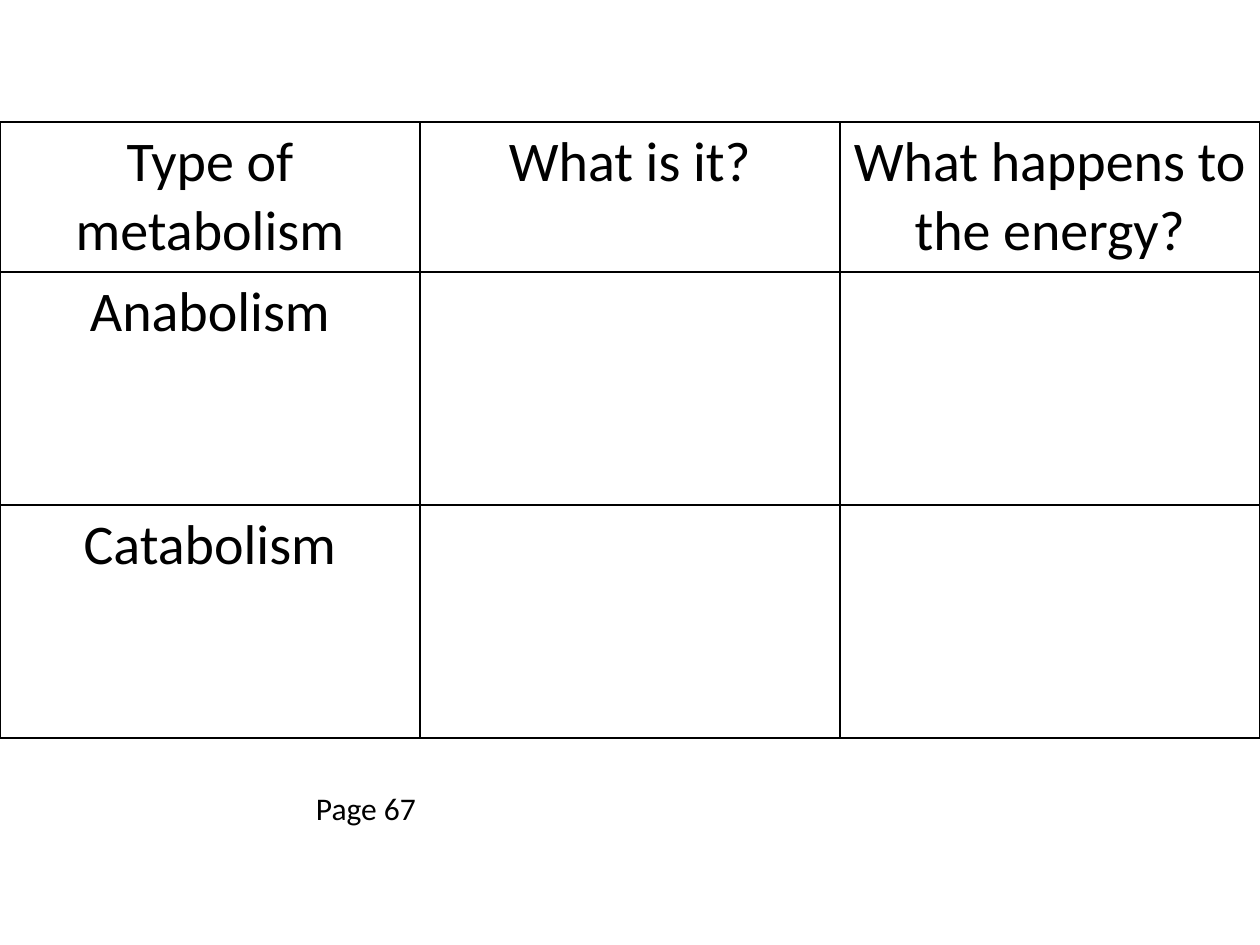
from lxml import etree
from pptx import Presentation
from pptx import util as u
from pptx.dml.color import RGBColor
from pptx.enum import text
from pptx.oxml import ns

BLACK = "000000"


def color(value):
    return RGBColor.from_string(value)


def write(frame, content, size=18, font="Calibri", fill=BLACK, align=text.PP_ALIGN.LEFT):
    paragraph = frame.paragraphs[0]
    paragraph.alignment = align
    run = paragraph.add_run()
    run.text = content
    run.font.size = u.Pt(size)
    run.font.name = font
    run.font.bold = False
    run.font.color.rgb = color(fill)


class SlideBuilder:
    def __init__(self, slide, text_size=32, border_color=BLACK, border_width=1):
        self.slide = slide
        self.text_size = text_size
        self.border_color = border_color
        self.border_width = border_width

    def border(self, cell):
        properties = cell._tc.get_or_add_tcPr()
        for position, side in enumerate(("lnL", "lnR", "lnT", "lnB")):
            line = etree.Element(ns.qn("a:" + side), w=str(u.Pt(self.border_width)))
            fill = etree.SubElement(line, ns.qn("a:solidFill"))
            etree.SubElement(fill, ns.qn("a:srgbClr"), val=self.border_color)
            properties.insert(position, line)

    def table(self, left, top, width, row_heights, rows):
        columns = len(rows[0])
        table = self.slide.shapes.add_table(
            len(rows), columns, u.Pt(left), u.Pt(top),
            u.Pt(width), u.Pt(sum(row_heights))).table
        table.first_row = False
        table.horz_banding = False
        for row, height, contents in zip(table.rows, row_heights, rows):
            row.height = u.Pt(height)
            for cell, content in zip(row.cells, contents):
                cell.fill.background()
                self.border(cell)
                if content:
                    write(cell.text_frame, content, size=self.text_size,
                          align=text.PP_ALIGN.CENTER)

    def label(self, left, top, width, height, content):
        shape = self.slide.shapes.add_textbox(
            u.Pt(left), u.Pt(top), u.Pt(width), u.Pt(height))
        shape.text_frame.word_wrap = False
        shape.text_frame.auto_size = text.MSO_AUTO_SIZE.SHAPE_TO_FIT_TEXT
        write(shape.text_frame, content)


def main():
    presentation = Presentation()
    presentation.slide_width = u.Pt(720)
    presentation.slide_height = u.Pt(540)
    slide = presentation.slides.add_slide(presentation.slide_layouts[6])
    builder = SlideBuilder(slide)

    # Metabolism worksheet
    builder.table(0, 69.84, 720, [73.44, 133.2, 133.2], [
        ["Type of metabolism", "What is it?", "What happens to the energy?"],
        ["Anabolism", "", ""],
        ["Catabolism", "", ""],
    ])

    # Page reference
    builder.label(173.52, 447.12, 72, 28.8, "Page 67")

    presentation.save("out.pptx")


if __name__ == "__main__":
    main()
